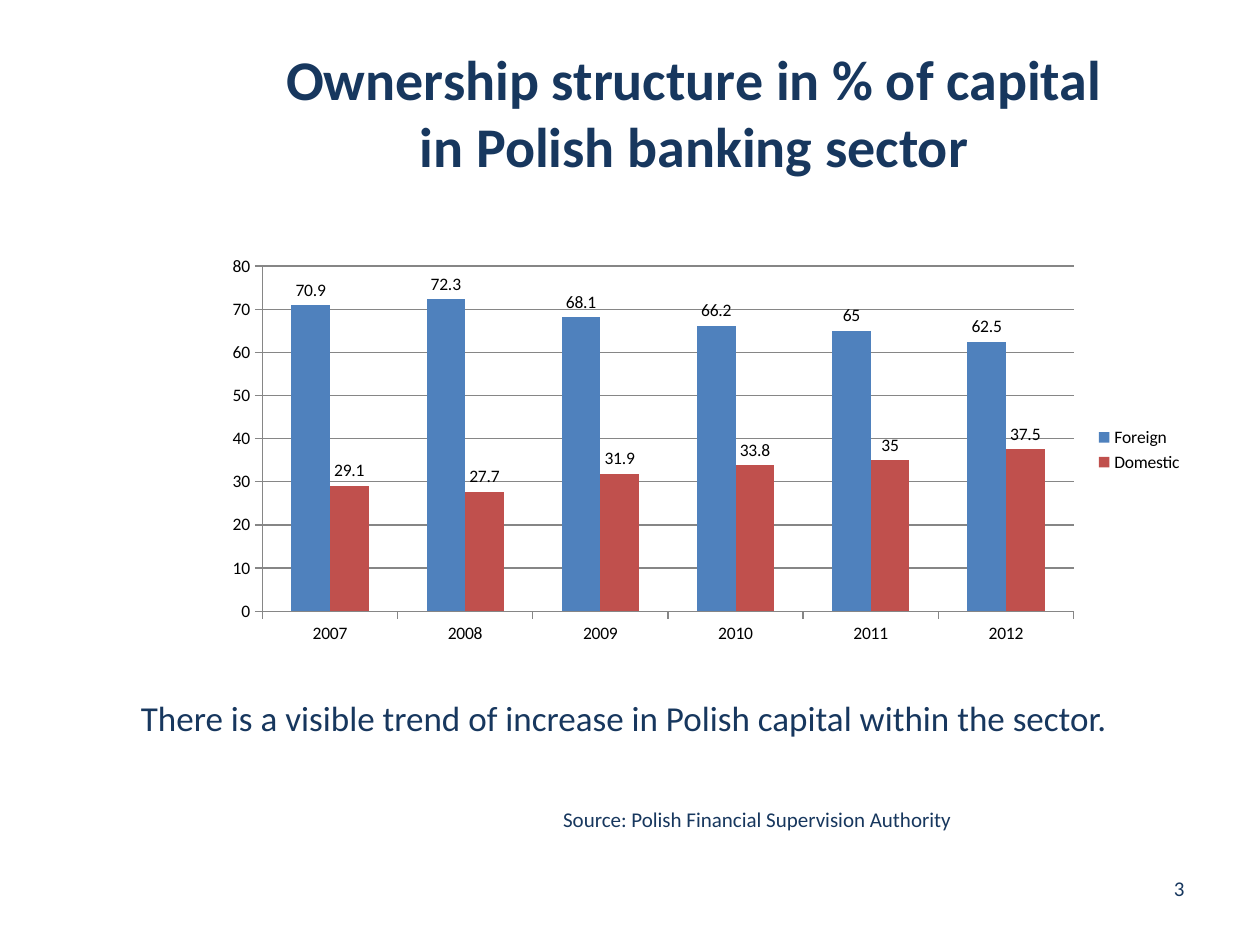
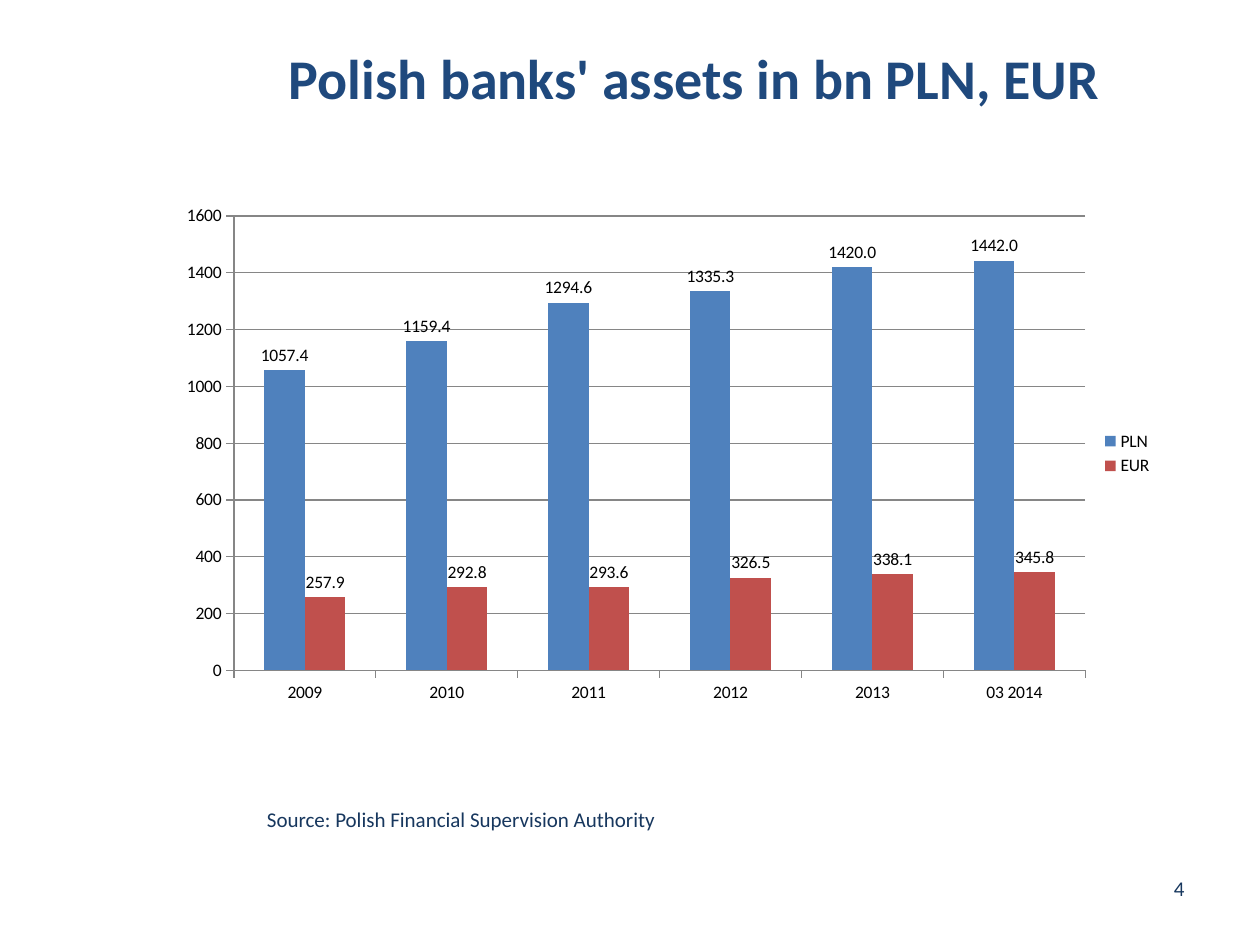
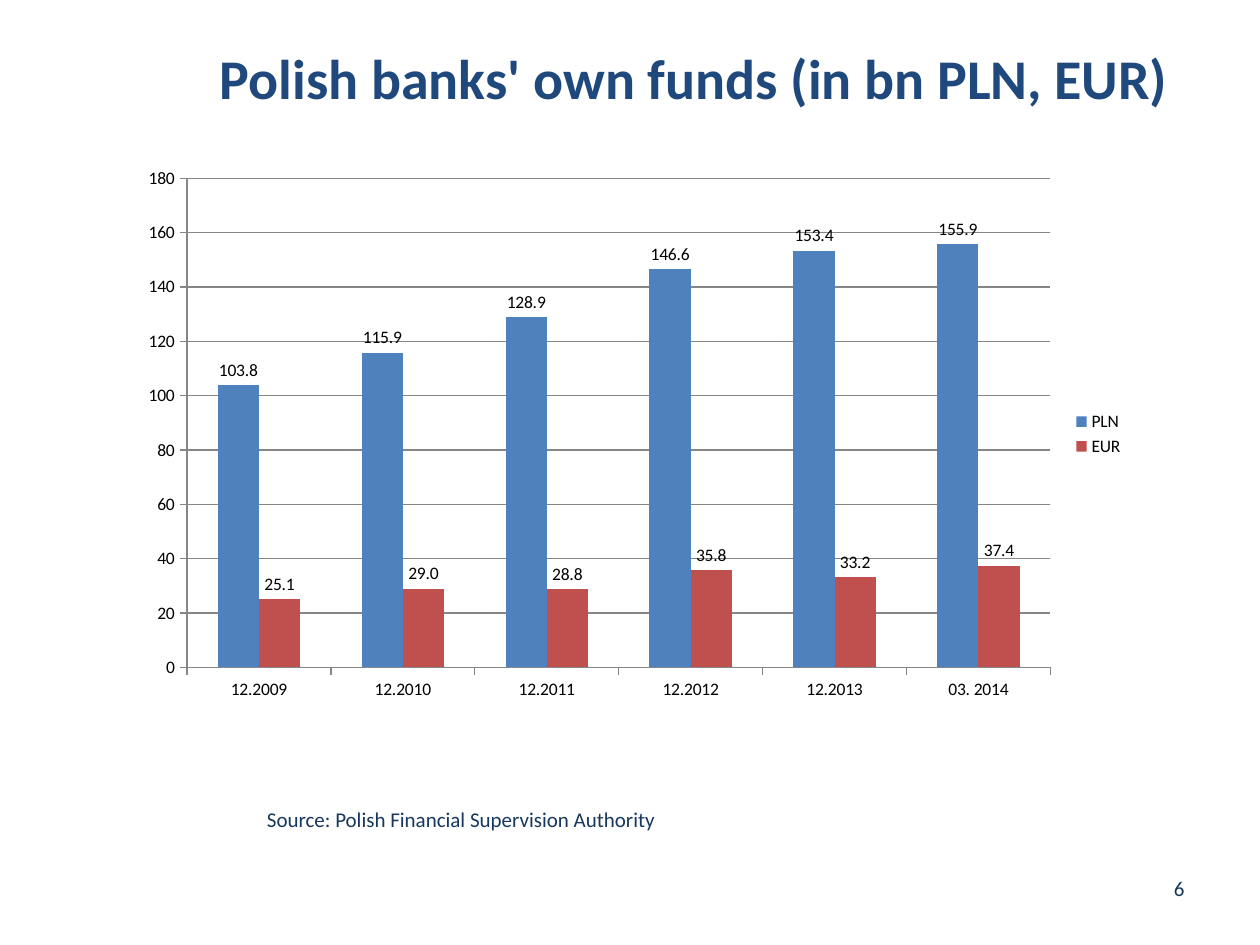
import pptx
import pptx.chart.data
import pptx.dml.color
import pptx.enum.chart
import pptx.enum.text
import pptx.oxml
import pptx.oxml.ns
import pptx.util
from pptx.util import Inches

COLORS = {
    "text": "17375E",
    "title": "1F497D",
    "first_series": "4F81BD",
    "second_series": "C0504D",
    "axis": "868686",
    "label": "000000",
}
FONT = "Calibri"
MARGIN = 1.02
CONTENT_WIDTH = 8.98
SOURCE_INDENT = 1
ALIGN = pptx.enum.text.PP_ALIGN


def rgb(name):
    return pptx.dml.color.RGBColor.from_string(COLORS[name])


def style_font(font, size, color, bold=False):
    font.name = FONT
    font.size = pptx.util.Pt(size)
    font.bold = bold
    font.color.rgb = rgb(color)


def add_text(slide, lines, left, top, width, height, size, color="text",
             bold=False, align=ALIGN.LEFT, anchor=pptx.enum.text.MSO_ANCHOR.TOP):
    frame = slide.shapes.add_textbox(
        Inches(left), Inches(top), Inches(width), Inches(height)).text_frame
    frame.word_wrap = True
    frame.vertical_anchor = anchor
    frame.text = "\n".join(lines)
    for paragraph in frame.paragraphs:
        paragraph.alignment = align
        style_font(paragraph.font, size, color, bold)


def add_title(slide, lines, color="title"):
    add_text(slide, lines, MARGIN, 0.3, CONTENT_WIDTH, 0.1 + 0.54 * len(lines),
             32, color, bold=True, align=ALIGN.CENTER)


def add_footer(slide, number, source_align=ALIGN.LEFT):
    """Add the data source and the slide number."""
    add_text(slide, ["Source: Polish Financial Supervision Authority"],
             MARGIN + SOURCE_INDENT, 6.35, CONTENT_WIDTH - SOURCE_INDENT, 0.3,
             12, align=source_align)
    add_text(slide, [str(number)], 7.17, 6.74, 2.33, 0.61, 12,
             align=ALIGN.RIGHT, anchor=pptx.enum.text.MSO_ANCHOR.MIDDLE)


def set_plot_area(chart, x, y, w, h):
    """Fix the inner plot area, in fractions of the chart size."""
    values = "".join(f'<c:{key} val="{value}"/>' for key, value in
                     (("x", x), ("y", y), ("w", w), ("h", h)))
    layout = pptx.oxml.parse_xml(
        f'<c:layout {pptx.oxml.ns.nsdecls("c")}><c:manualLayout>'
        '<c:layoutTarget val="inner"/><c:xMode val="edge"/><c:yMode val="edge"/>'
        f'{values}</c:manualLayout></c:layout>')
    plot_area = chart.plots[0]._element.getparent()
    for automatic in plot_area.findall(pptx.oxml.ns.qn("c:layout")):
        plot_area.remove(automatic)
    plot_area.insert(0, layout)


def style_axis(axis):
    axis.major_tick_mark = pptx.enum.chart.XL_TICK_MARK.OUTSIDE
    axis.minor_tick_mark = pptx.enum.chart.XL_TICK_MARK.NONE
    axis.format.line.color.rgb = rgb("axis")


def add_column_chart(slide, box, periods, series_values, label_format="0.0"):
    data = pptx.chart.data.CategoryChartData()
    data.categories = periods
    for name, values in series_values.items():
        data.add_series(name, values)
    chart = slide.shapes.add_chart(
        pptx.enum.chart.XL_CHART_TYPE.COLUMN_CLUSTERED,
        *map(Inches, box), data).chart
    style_font(chart.font, 10, "label")
    chart.has_title = False
    chart.has_legend = True
    chart.legend.position = pptx.enum.chart.XL_LEGEND_POSITION.RIGHT
    chart.legend.include_in_layout = False

    style_axis(chart.category_axis)
    style_axis(chart.value_axis)
    chart.value_axis.has_major_gridlines = True
    chart.value_axis.major_gridlines.format.line.color.rgb = rgb("axis")

    columns = chart.plots[0]
    columns.gap_width = 150
    columns.overlap = 0
    columns.vary_by_categories = False
    for series, color in zip(columns.series, ("first_series", "second_series")):
        series.format.fill.solid()
        series.format.fill.fore_color.rgb = rgb(color)
        series.invert_if_negative = False
        labels = series.data_labels
        labels.show_value = True
        labels.number_format = label_format
        labels.number_format_is_linked = False
        labels.position = pptx.enum.chart.XL_LABEL_POSITION.OUTSIDE_END
    return chart


def add_ownership_slide(slide):
    add_title(slide, ["Ownership structure in % of capital",
                      "in Polish banking sector"], "text")
    add_column_chart(
        slide, (1.69, 1.97, 7.8, 3.2), [str(year) for year in range(2007, 2013)],
        {"Foreign": (70.9, 72.3, 68.1, 66.2, 65, 62.5),
         "Domestic": (29.1, 27.7, 31.9, 33.8, 35, 37.5)}, "General")
    add_text(slide, ["There is a visible trend of increase in Polish capital "
                     "within the sector."], MARGIN, 5.48, CONTENT_WIDTH, 0.44, 20)
    add_footer(slide, 3, ALIGN.CENTER)


def add_assets_slide(slide):
    add_title(slide, ["Polish banks' assets in bn PLN, EUR"])
    chart = add_column_chart(
        slide, (1.3, 1.55, 7.95, 4.1),
        [str(year) for year in range(2009, 2014)] + ["03 2014"],
        {"PLN": (1057.4, 1159.4, 1294.6, 1335.3, 1420, 1442),
         "EUR": (257.9, 292.8, 293.6, 326.5, 338.1, 345.8)})
    set_plot_area(chart, 0.07, 0.04, 0.85, 0.88)
    add_footer(slide, 4)


def add_own_funds_slide(slide):
    add_title(slide, ["Polish banks' own funds (in bn PLN, EUR)"])
    add_column_chart(
        slide, (MARGIN, 1.25, 8, 4.39),
        [f"12.{year}" for year in range(2009, 2014)] + ["03. 2014"],
        {"PLN": (103.8, 115.9, 128.9, 146.6, 153.4, 155.9),
         "EUR": (25.1, 29, 28.8, 35.8, 33.2, 37.4)})
    add_footer(slide, 6)


def main():
    deck = pptx.Presentation()
    deck.slide_width = Inches(10)
    deck.slide_height = Inches(7.5)
    blank = deck.slide_layouts[6]
    for build in (add_ownership_slide, add_assets_slide, add_own_funds_slide):
        build(deck.slides.add_slide(blank))
    deck.save("out.pptx")


if __name__ == "__main__":
    main()
